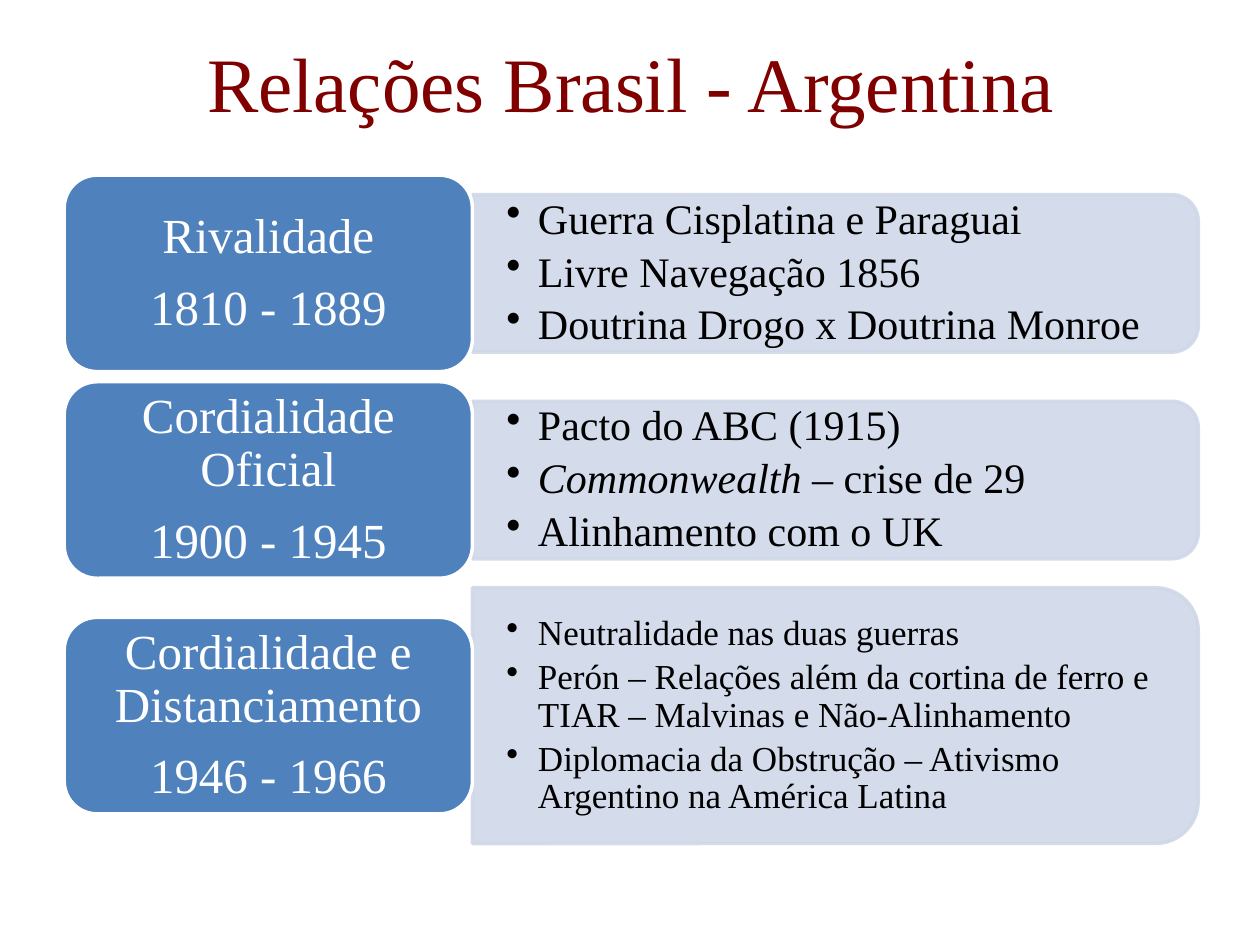
from lxml import etree
from pptx import Presentation
from pptx.dml.color import RGBColor
from pptx.enum.shapes import MSO_SHAPE
from pptx.enum.text import MSO_ANCHOR, PP_ALIGN
from pptx.oxml.ns import qn
from pptx.util import Emu, Inches, Pt

ROUNDED = MSO_SHAPE.ROUNDED_RECTANGLE
ROUND_TOP = MSO_SHAPE.ROUND_2_SAME_RECTANGLE
MIDDLE = MSO_ANCHOR.MIDDLE
CENTER, LEFT = PP_ALIGN.CENTER, PP_ALIGN.LEFT

FONT = "Times New Roman"
TITLE = "Relações Brasil - Argentina"
ITALIC_WORDS = {"Commonwealth"}
PERIODS = [
    {"label": ["Rivalidade", "1810 - 1889"], "center": 2.17, "height": 1.25, "size": 24,
     "facts": [["Guerra Cisplatina e Paraguai"], ["Livre Navegação 1856"],
               ["Doutrina Drogo x Doutrina Monroe"]]},
    {"label": ["Cordialidade Oficial", "1900 - 1945"], "center": 3.81, "height": 1.25, "size": 24,
     "facts": [["Pacto do ABC (1915)"], ["Commonwealth", " – crise de 29"],
               ["Alinhamento com o UK"]]},
    {"label": ["Cordialidade e Distanciamento", "1946 - 1966"], "center": 5.68, "height": 2.03,
     "size": 20,
     "facts": [["Neutralidade nas duas guerras"],
               ["Perón – Relações além da cortina de ferro e TIAR – Malvinas e Não-Alinhamento"],
               ["Diplomacia da Obstrução – Ativismo Argentino na América Latina"]]},
]

MARGIN, LABEL_WIDTH, LABEL_HEIGHT = 0.51, 3.24, 1.56
PANEL_LEFT, PANEL_WIDTH = MARGIN + LABEL_WIDTH, 5.76
INDENT = 0.25


def rgb(color):
    return RGBColor.from_string(color)


def add_block(slide, kind, box, fill, line, opacity=100):
    block = slide.shapes.add_shape(kind, *map(Inches, box))
    block.shadow.inherit = False
    block.fill.solid()
    block.fill.fore_color.rgb = rgb(fill)
    block.line.color.rgb = rgb(line)
    block.line.width = Pt(2)
    if opacity < 100:
        for color in block._element.spPr.iter(qn("a:srgbClr")):
            etree.SubElement(color, qn("a:alpha"), val=str(opacity * 1000))
    return block


def write(frame, paragraphs, size, color, align, insets=(0.1, 0.05), spacing=1, after=0,
          bullets=False):
    frame.word_wrap = True
    frame.vertical_anchor = MIDDLE
    frame.margin_left = frame.margin_right = Inches(insets[0])
    frame.margin_top = frame.margin_bottom = Inches(insets[1])
    for index, runs in enumerate(paragraphs):
        paragraph = frame.paragraphs[0] if index == 0 else frame.add_paragraph()
        paragraph.alignment = align
        paragraph.line_spacing = spacing
        paragraph.space_after = Pt(round(size * after, 1))
        paragraph.font.name = FONT
        paragraph.font.size = Pt(size)
        paragraph.font.color.rgb = rgb(color)
        for words in runs:
            run = paragraph.add_run()
            run.text = words
            if words in ITALIC_WORDS:
                run.font.italic = True
        if bullets:
            properties = paragraph._p.get_or_add_pPr()
            properties.set("marL", str(Inches(INDENT)))
            properties.set("indent", str(Inches(-INDENT)))
            bullet = etree.Element(qn("a:buChar"), char="•")
            properties.find(qn("a:defRPr")).addprevious(bullet)


def add_text(slide, box, *args, **options):
    write(slide.shapes.add_textbox(*map(Inches, box)).text_frame, *args, **options)


def add_period(slide, period):
    center, height = period["center"], period["height"]
    middle = PANEL_LEFT + PANEL_WIDTH / 2
    panel = add_block(slide, ROUND_TOP,
                      (middle - height / 2, center - PANEL_WIDTH / 2, height, PANEL_WIDTH),
                      "D0D8E8", "D0D8E8", opacity=90)
    panel.rotation = 90
    add_text(slide, (PANEL_LEFT, center - height / 2 + 0.06, PANEL_WIDTH - 0.06, height - 0.12),
             period["facts"], period["size"], "000000", LEFT, insets=(0.27, 0.14),
             spacing=0.9, after=0.18, bullets=True)
    label = add_block(slide, ROUNDED,
                      (MARGIN, center - LABEL_HEIGHT / 2, LABEL_WIDTH, LABEL_HEIGHT),
                      "4F81BD", "FFFFFF")
    write(label.text_frame, [[words] for words in period["label"]], 28, "FFFFFF", CENTER,
          insets=(0.12, 0.06), spacing=0.9, after=0.38)


def main():
    deck = Presentation()
    deck.slide_width, deck.slide_height = Inches(10), Inches(7.5)
    slide = deck.slides.add_slide(deck.slide_layouts[6])
    add_text(slide, (MARGIN, 0.21, 9, 0.87), [[TITLE]], 44, "800000", CENTER)
    for period in PERIODS:
        add_period(slide, period)
    deck.save("out.pptx")


if __name__ == "__main__":
    main()
